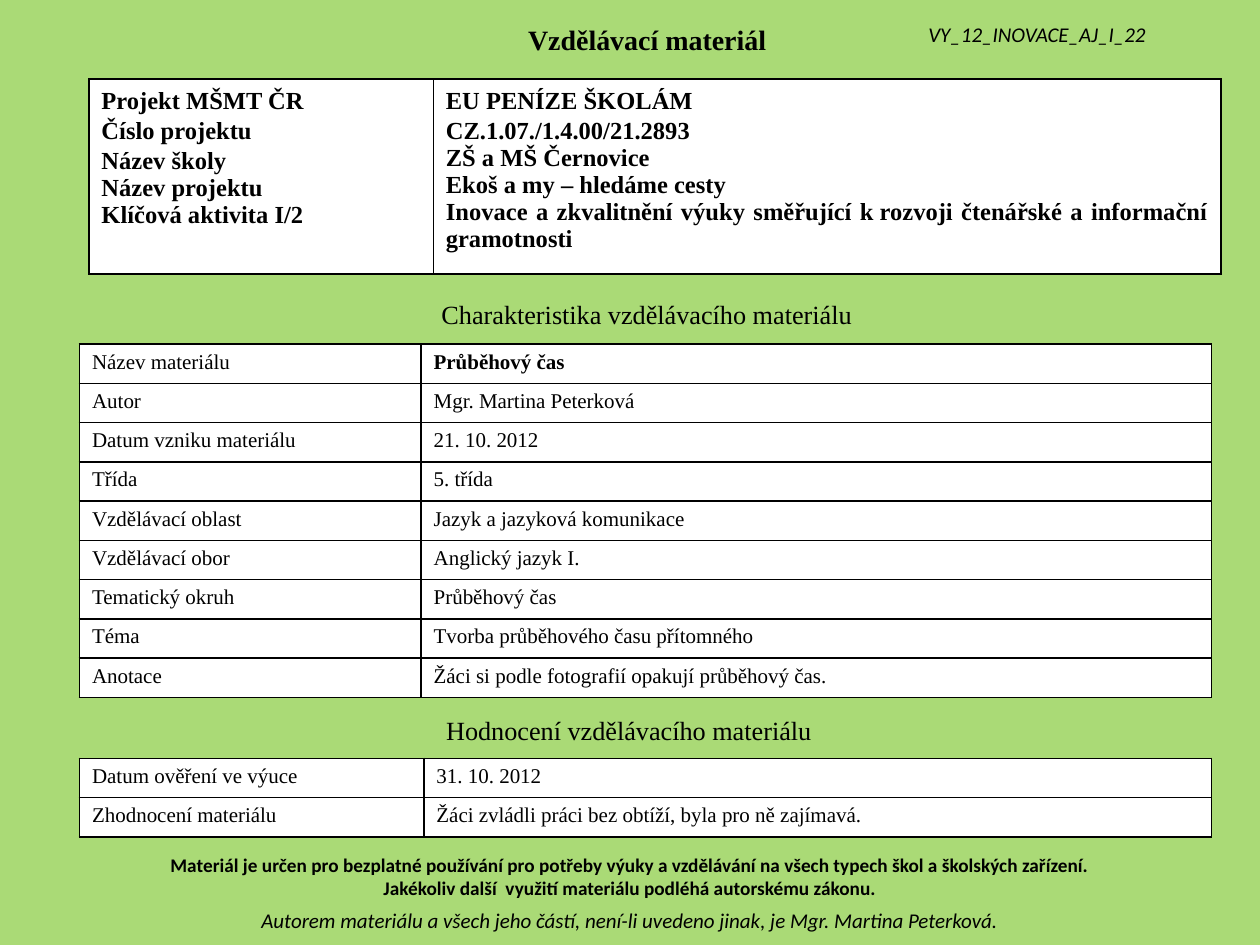
from lxml.etree import SubElement
from pptx import Presentation
from pptx.dml.color import RGBColor
from pptx.enum.text import MSO_ANCHOR as ANCHOR, PP_ALIGN as ALIGN
from pptx.oxml.ns import qn
from pptx.util import Pt

GREEN = RGBColor(0xAA, 0xDA, 0x76)
WHITE = RGBColor(0xFF, 0xFF, 0xFF)
BLACK = RGBColor(0, 0, 0)
SERIF, SANS = "Times New Roman", "Calibri"
PLAIN_STYLE = "{2D5ABB26-0587-4C30-8999-92F81FD0307C}"

PROJECT = [[
    "Projekt MŠMT ČR\nČíslo projektu\nNázev školy\nNázev projektu\nKlíčová aktivita I/2",
    "EU PENÍZE ŠKOLÁM\nCZ.1.07./1.4.00/21.2893\nZŠ a MŠ Černovice\nEkoš a my – hledáme cesty\n"
    "Inovace a zkvalitnění výuky směřující k\u00a0rozvoji čtenářské a informační gramotnosti",
]]
MATERIAL = [
    ["Název materiálu", "Průběhový čas"],
    ["Autor", "Mgr. Martina Peterková"],
    ["Datum vzniku materiálu", "21. 10. 2012"],
    ["Třída", "5. třída"],
    ["Vzdělávací oblast", "Jazyk a jazyková komunikace"],
    ["Vzdělávací obor", "Anglický jazyk I."],
    ["Tematický okruh", "Průběhový čas"],
    ["Téma", "Tvorba průběhového času přítomného"],
    ["Anotace", "Žáci si podle fotografií opakují průběhový čas."],
]
EVALUATION = [
    ["Datum ověření ve výuce", "31. 10. 2012"],
    ["Zhodnocení materiálu", "Žáci zvládli práci bez obtíží, byla pro ně zajímavá."],
]


def write(tf, text, align=ALIGN.LEFT, **font):
    tf.text = text
    for p in tf.paragraphs:
        p.alignment = align
        for r in p.runs:
            r.font.color.rgb = BLACK
            for name, value in font.items():
                setattr(r.font, name, value)


def add_text(slide, box, text, anchor=ANCHOR.TOP, **fmt):
    tf = slide.shapes.add_textbox(*map(Pt, box)).text_frame
    tf.word_wrap = True
    tf.vertical_anchor = anchor
    write(tf, text, **fmt)
    return tf


def add_borders(cell):
    tc_pr = cell._tc.get_or_add_tcPr()
    for i, side in enumerate(("a:lnL", "a:lnR", "a:lnT", "a:lnB")):
        ln = SubElement(tc_pr, qn(side), w=str(Pt(1)))
        SubElement(SubElement(ln, qn("a:solidFill")), qn("a:srgbClr"), val=str(BLACK))
        tc_pr.insert(i, ln)


def add_grid(slide, left, top, widths, row_height, rows, boxed=True, **fmt):
    """Table without a style; boxed cells are white with black borders."""
    size = sum(widths), row_height * len(rows)
    table = slide.shapes.add_table(len(rows), len(widths),
                                   *map(Pt, (left, top, *size))).table
    table.first_row = table.horz_banding = False
    table._tbl.tblPr.find(qn("a:tableStyleId")).text = PLAIN_STYLE
    for col, width in zip(table.columns, widths):
        col.width = Pt(width)
    for row, texts in zip(table.rows, rows):
        row.height = Pt(row_height)
        for cell, text in zip(row.cells, texts):
            write(cell.text_frame, text, **fmt)
            if boxed:
                cell.fill.solid()
                cell.fill.fore_color.rgb = WHITE
                add_borders(cell)
    return table


def add_header(slide, left, top):
    add_text(slide, (left, top, 682, 30), "Vzdělávací materiál", align=ALIGN.CENTER,
             size=Pt(16), name=SERIF, bold=True).paragraphs[0].line_spacing = 0.9
    add_text(slide, (left + 494.6, top - 3, 190, 24), "VY_12_INOVACE_AJ_I_22",
             size=Pt(12), name=SANS, italic=True)


def add_project(slide, left, top):
    table = add_grid(slide, left, top, (196.8, 450), 111.5, PROJECT,
                     size=Pt(14), name=SERIF, bold=True)
    for col, spaced in enumerate((3, 2)):
        for p in table.cell(0, col).text_frame.paragraphs[:spaced]:
            p.line_spacing = 1.1
    table.cell(0, 1).text_frame.paragraphs[-1].alignment = ALIGN.JUSTIFY


def add_material(slide, left, top):
    add_grid(slide, left + 84.2, top, (480.2,), 25, [["Charakteristika vzdělávacího materiálu"]],
             boxed=False, align=ALIGN.CENTER, size=Pt(15), name=SERIF)
    table = add_grid(slide, left, top + 28.2, (195.2, 451.6), 22.45, MATERIAL,
                     size=Pt(12), name=SERIF)
    table.cell(0, 1).text_frame.paragraphs[0].runs[0].font.bold = True


def add_evaluation(slide, left, top):
    add_text(slide, (left + 202.4, top, 229, 25), "Hodnocení vzdělávacího materiálu",
             size=Pt(15), name=SERIF)
    add_grid(slide, left, top + 28.4, (196.8, 450), 22.45, EVALUATION,
             size=Pt(12), name=SERIF)


def add_footer(slide, left, top, width):
    add_text(slide, (left, top, width, 34),
             "Materiál je určen pro bezplatné používání pro potřeby výuky a vzdělávání "
             "na všech typech škol a školských zařízení.\n"
             "Jakékoliv další  využití materiálu podléhá autorskému zákonu.",
             anchor=ANCHOR.MIDDLE, align=ALIGN.CENTER, size=Pt(11), name=SANS, bold=True)
    add_text(slide, (left, top + 31.2, width, 22),
             "Autorem materiálu a všech jeho částí, není-li uvedeno jinak, "
             "je Mgr. Martina Peterková.",
             align=ALIGN.CENTER, size=Pt(12), name=SANS, italic=True)


def main():
    prs = Presentation()
    prs.slide_width, prs.slide_height = Pt(720), Pt(540)
    slide = prs.slides.add_slide(prs.slide_layouts[6])
    fill = slide.background.fill
    fill.solid()
    fill.fore_color.rgb = GREEN
    add_header(slide, 28.8, 11.5)
    add_project(slide, 50.8, 45)
    add_material(slide, 45.4, 168.5)
    add_evaluation(slide, 45.4, 404.9)
    add_footer(slide, 0, 483.8, 720)
    prs.save("out.pptx")


if __name__ == "__main__":
    main()
